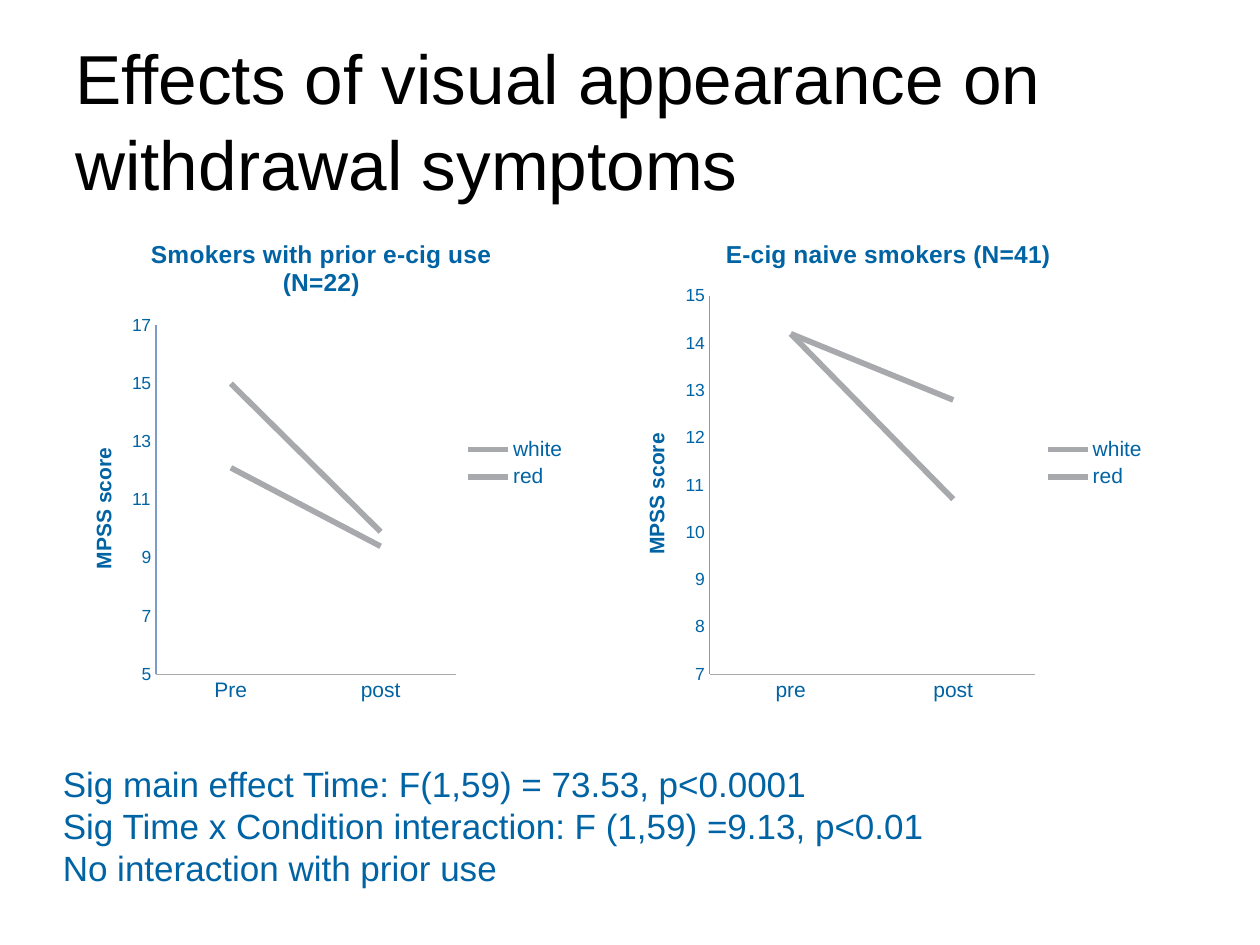
from dataclasses import dataclass
from lxml import etree
from pptx import Presentation
from pptx.chart.data import CategoryChartData
from pptx.dml.color import RGBColor
from pptx.enum.chart import XL_CHART_TYPE, XL_LEGEND_POSITION, XL_TICK_MARK
from pptx.enum.text import MSO_ANCHOR
from pptx.oxml.ns import qn
from pptx.util import Inches, Pt

LINE = XL_CHART_TYPE.LINE
RIGHT = XL_LEGEND_POSITION.RIGHT
NO_TICK = XL_TICK_MARK.NONE
TOP, MIDDLE = MSO_ANCHOR.TOP, MSO_ANCHOR.MIDDLE
WIDE, HIGH = Inches(10), Inches(7.5)


@dataclass(frozen=True)
class Theme:
    face: str = "Arial"
    ink: RGBColor = RGBColor(0x00, 0x00, 0x00)
    blue: RGBColor = RGBColor(0x00, 0x63, 0xA4)
    gray: RGBColor = RGBColor(0xA7, 0xA9, 0xAC)
    axis: RGBColor = RGBColor(0x7F, 0x9B, 0xC8)
    title: float = 39.6
    body: float = 20
    head: float = 14
    label: float = 12
    tick: float = 10
    stroke: float = 3.25


THEME = Theme()


def area(left, top, width, height):
    return (round(WIDE * left), round(HIGH * top),
            round(WIDE * width), round(HIGH * height))


def style(font, size, color, bold=False):
    font.name, font.size, font.bold = THEME.face, Pt(size), bold
    font.color.rgb = color


def add_text(slide, box, lines, size, color, anchor=TOP, pitch=1.0):
    frame = slide.shapes.add_textbox(*box).text_frame
    frame.word_wrap = True
    frame.vertical_anchor = anchor
    for i, line in enumerate(lines):
        para = frame.add_paragraph() if i else frame.paragraphs[0]
        para.line_spacing = pitch
        run = para.add_run()
        run.text = line
        style(run.font, size, color)


def add_head(owner, text, size):
    run = owner.text_frame.paragraphs[0].add_run()
    run.text = text
    style(run.font, size, THEME.blue, True)


def set_plot(chart, shares):
    area_xml = chart.element.find(".//" + qn("c:plotArea"))
    old = area_xml.find(qn("c:layout"))
    if old is not None:
        area_xml.remove(old)
    layout = etree.Element(qn("c:layout"))
    manual = etree.SubElement(layout, qn("c:manualLayout"))
    parts = [("layoutTarget", "inner"), ("xMode", "edge"), ("yMode", "edge")]
    for tag, value in parts + list(zip("xywh", shares)):
        etree.SubElement(manual, qn("c:" + tag)).set("val", str(value))
    area_xml.insert(0, layout)


def add_lines(slide, box, title, cats, rows, scale, plot):
    data = CategoryChartData()
    data.categories = cats
    for name, values in rows:
        data.add_series(name, values)
    chart = slide.shapes.add_chart(LINE, *box, data).chart
    style(chart.font, THEME.tick, THEME.blue)
    chart.has_title = True
    add_head(chart.chart_title, title, THEME.head)
    chart.chart_title.include_in_layout = False
    chart.has_legend = True
    chart.legend.position = RIGHT
    chart.legend.include_in_layout = False
    style(chart.legend.font, THEME.label, THEME.blue)

    cat, val = chart.category_axis, chart.value_axis
    for axis, size in ((cat, THEME.label), (val, THEME.tick)):
        axis.major_tick_mark = axis.minor_tick_mark = NO_TICK
        axis.has_major_gridlines = False
        style(axis.tick_labels.font, size, THEME.blue)
        axis.format.line.width = Pt(0.75)
    cat.format.line.color.rgb = THEME.gray
    val.format.line.color.rgb = THEME.axis
    val.minimum_scale, val.maximum_scale, val.major_unit = scale
    val.has_title = True
    add_head(val.axis_title, "MPSS score", THEME.label)

    chart.plots[0].vary_by_categories = False
    for row in chart.plots[0].series:
        row.smooth = False
        row.format.line.width = Pt(THEME.stroke)
        row.format.line.color.rgb = THEME.gray
    set_plot(chart, plot)


def main():
    deck = Presentation()
    deck.slide_width, deck.slide_height = WIDE, HIGH
    slide = deck.slides.add_slide(deck.slide_layouts[6])
    add_text(slide, area(0.05, 0.04, 0.9, 0.17),
             ["Effects of visual appearance on withdrawal symptoms"],
             THEME.title, THEME.ink, MIDDLE, 1.04)
    add_lines(slide, area(0.05, 0.23, 0.41, 0.52),
              "Smokers with prior e-cig use (N=22)", ["Pre", "post"],
              [("white", (15, 9.9)), ("red", (12.1, 9.4))],
              (5, 17, 2), (0.18, 0.22, 0.58, 0.71))
    add_lines(slide, area(0.49, 0.23, 0.43, 0.52),
              "E-cig naive smokers (N=41)", ["pre", "post"],
              [("white", (14.2, 10.7)), ("red", (14.2, 12.8))],
              (7, 15, 1), (0.17, 0.16, 0.6, 0.77))
    add_text(slide, area(0.04, 0.8, 0.72, 0.15),
             ["Sig main effect Time: F(1,59) = 73.53, p<0.0001",
              "Sig Time x Condition interaction: F (1,59) =9.13, p<0.01",
              "No interaction with prior use"],
             THEME.body, THEME.blue)
    deck.save("out.pptx")


if __name__ == "__main__":
    main()
